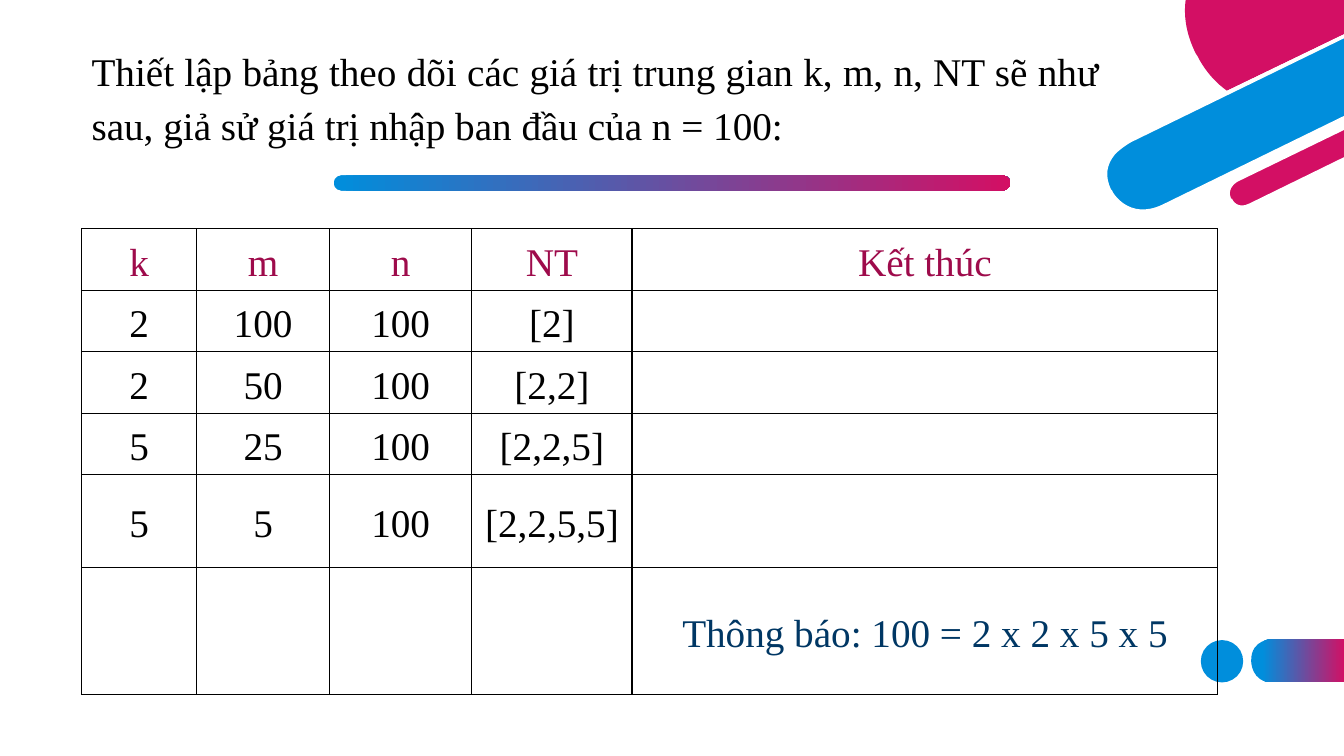
import pptx
import pptx.dml.color
import pptx.enum.shapes
import pptx.enum.text
import pptx.oxml
import pptx.oxml.ns
import pptx.util
from pptx.util import Inches

BLUE, PINK, WHITE, BLACK = "008EDC", "D30F64", "FFFFFF", "000000"
MAROON, NAVY = "9E0B4B", "003764"
FONT = "Times New Roman"

# Outlines in inches from the corner of their box: a pair of numbers is a
# point, six numbers are a cubic curve (two control points and its end).
CORNER_PARTS = [
    (WHITE, [(2.43, 0.81), (2.16, 0.94), (1.84, 1.1, 1.54, 1.08, 1.29, 0.89),
             (1.09, 0.74, 0.99, 0.55, 0.99, 0.55), (0.98, 0.52),
             (0.89, 0.34, 0.85, 0.16, 0.88, 0), (0.84, 0),
             (0.81, 0.17, 0.85, 0.35, 0.94, 0.54), (0.96, 0.57),
             (0.96, 0.58, 1.06, 0.77, 1.26, 0.92),
             (1.38, 1.01, 1.54, 1.09, 1.75, 1.09),
             (1.87, 1.09, 2.01, 1.06, 2.18, 0.98), (2.43, 0.86)]),
    (BLUE, [(0.31, 1.39), (0.31, 1.39, -0.05, 1.57, 0.11, 1.89), (0.11, 1.9),
            (0.11, 1.9, 0.27, 2.22, 0.64, 2.04), (2.43, 1.17), (2.43, 0.36)]),
    (PINK, [(0.98, 0.56), (0.98, 0.56, 1.07, 0.76, 1.27, 0.9), (2.43, 0.34),
            (2.43, 0), (0.86, 0), (0.84, 0.15, 0.86, 0.33, 0.96, 0.53)]),
    (PINK, [(2.43, 1.26), (1.37, 1.78), (1.37, 1.78, 1.23, 1.85, 1.3, 1.97),
            (1.3, 1.98), (1.3, 1.98, 1.36, 2.11, 1.5, 2.04), (2.43, 1.58)]),
    (WHITE, [(1.49, 2.02), (1.37, 2.08, 1.32, 1.98, 1.32, 1.97), (1.31, 1.97),
             (1.26, 1.86, 1.38, 1.8, 1.38, 1.8), (2.43, 1.29), (2.43, 1.24),
             (1.36, 1.76), (1.36, 1.76, 1.29, 1.8, 1.27, 1.87),
             (1.25, 1.91, 1.26, 1.95, 1.28, 1.99),
             (1.3, 2.03, 1.35, 2.08, 1.42, 2.08),
             (1.45, 2.08, 1.48, 2.08, 1.51, 2.06), (2.43, 1.61), (2.43, 1.56)]),
    (WHITE, [(0.63, 2.03), (0.29, 2.19, 0.13, 1.9, 0.13, 1.89), (0.12, 1.88),
             (0.06, 1.75, 0.07, 1.64, 0.16, 1.53),
             (0.23, 1.46, 0.32, 1.41, 0.32, 1.41), (2.43, 0.38), (2.43, 0.34),
             (0.3, 1.37), (0.29, 1.38, 0.12, 1.46, 0.06, 1.63),
             (0.03, 1.71, 0.04, 1.8, 0.09, 1.9), (0.09, 1.91),
             (0.09, 1.91, 0.2, 2.12, 0.43, 2.12),
             (0.49, 2.12, 0.56, 2.1, 0.64, 2.06), (2.43, 1.19), (2.43, 1.15)]),
]
TAB_OUTLINE = [(0.21, 0.43), (0.93, 0.43), (0.93, 0), (0.21, 0),
               (0.21, 0, 0, 0, 0, 0.21), (0, 0.22), (0, 0.22, 0, 0.43, 0.21, 0.43)]

COLUMNS = [1.14, 1.32, 1.41, 1.59, 5.81]
ROWS = [0.61, 0.61, 0.61, 0.61, 0.92, 1.26]
VALUES = [
    ["k", "m", "n", "NT", "Kết thúc"],
    ["2", "100", "100", "[2]", ""],
    ["2", "50", "100", "[2,2]", ""],
    ["5", "25", "100", "[2,2,5]", ""],
    ["5", "5", "100", "[2,2,5,5]", ""],
    ["", "", "", "", "Thông báo: 100 = 2 x 2 x 5 x 5"],
]


def rgb(color):
    return pptx.dml.color.RGBColor.from_string(color)


def paint(s, color):
    s.shadow.inherit = False
    s.line.fill.background()
    s.fill.solid()
    s.fill.fore_color.rgb = rgb(color)


def paint_gradient(s, start=0):
    """Blend blue into pink from left to right, beginning at start (0 to 1)."""
    s.shadow.inherit = False
    s.line.fill.background()
    s.fill.gradient()
    s.fill.gradient_angle = 0
    for stop, color, position in zip(s.fill.gradient_stops, (BLUE, PINK), (start, 1)):
        stop.color.rgb = rgb(color)
        stop.position = position


def add_outline(shapes, left, top, outline):
    """Draw the ends of all segments, then bend those that are curves."""
    ends = [(Inches(left + seg[-2]), Inches(top + seg[-1])) for seg in outline]
    builder = shapes.build_freeform(*ends[0])
    builder.add_line_segments(ends[1:], close=True)
    s = builder.convert_to_shape()
    lines = s._element.findall(".//" + pptx.oxml.ns.qn("a:lnTo"))
    for line, seg in zip(lines, outline[1:]):
        if len(seg) == 6:
            points = "".join(
                f'<a:pt x="{Inches(left + x) - s.left}" y="{Inches(top + y) - s.top}"/>'
                for x, y in zip(seg[::2], seg[1::2]))
            line.getparent().replace(line, pptx.oxml.parse_xml(
                f'<a:cubicBezTo {pptx.oxml.ns.nsdecls("a")}>{points}</a:cubicBezTo>'))
    return s


def style_paragraph(p, align, color):
    p.alignment = align
    p.line_spacing = 1.15
    for r in p.runs:
        r.font.name = FONT
        r.font.size = pptx.util.Pt(28)
        r.font.color.rgb = rgb(color)


def add_corner(slide, left, top):
    group = slide.shapes.add_group_shape()
    for color, outline in CORNER_PARTS:
        paint(add_outline(group.shapes, left, top, outline), color)


def add_page_marker(slide, left, top, size):
    dot = slide.shapes.add_shape(pptx.enum.shapes.MSO_SHAPE.OVAL, Inches(left),
                                 Inches(top), Inches(size), Inches(size))
    paint(dot, BLUE)
    tab = add_outline(slide.shapes, left + size + 0.08, top - 0.01, TAB_OUTLINE)
    paint_gradient(tab, 0.12)


def add_divider(slide, *box):
    bar = slide.shapes.add_shape(pptx.enum.shapes.MSO_SHAPE.ROUNDED_RECTANGLE,
                                 *map(Inches, box))
    bar.adjustments[0] = 0.5
    paint_gradient(bar)


def add_intro(slide, *box):
    tf = slide.shapes.add_textbox(*map(Inches, box)).text_frame
    tf.word_wrap = True
    tf.text = ("Thiết lập bảng theo dõi các giá trị trung gian k, m, n, NT sẽ như "
               "sau, giả sử giá trị nhập ban đầu của n = 100:")
    style_paragraph(tf.paragraphs[0], pptx.enum.text.PP_ALIGN.JUSTIFY, BLACK)


def add_borders(cell):
    tc_pr = cell._tc.get_or_add_tcPr()
    for side in ("lnL", "lnR", "lnT", "lnB"):
        tc_pr.append(pptx.oxml.parse_xml(
            f'<a:{side} {pptx.oxml.ns.nsdecls("a")} w="12700"><a:solidFill>'
            f'<a:srgbClr val="{BLACK}"/></a:solidFill></a:{side}>'))


def add_trace_table(slide, left, top):
    table = slide.shapes.add_table(len(ROWS), len(COLUMNS), Inches(left), Inches(top),
                                   Inches(sum(COLUMNS)), Inches(sum(ROWS))).table
    table.first_row = table.horz_banding = False
    for column, width in zip(table.columns, COLUMNS):
        column.width = Inches(width)
    for i, (row, height) in enumerate(zip(table.rows, ROWS)):
        row.height = Inches(height)
        color = {0: MAROON, len(ROWS) - 1: NAVY}.get(i, BLACK)
        for cell, value in zip(row.cells, VALUES[i]):
            cell.text = value
            cell.vertical_anchor = pptx.enum.text.MSO_ANCHOR.MIDDLE
            cell.margin_left = cell.margin_right = Inches(0.07)
            cell.margin_top = cell.margin_bottom = 0
            style_paragraph(cell.text_frame.paragraphs[0],
                            pptx.enum.text.PP_ALIGN.CENTER, color)
            add_borders(cell)
            cell.fill.background()


def main():
    prs = pptx.Presentation()
    prs.slide_width, prs.slide_height = Inches(13.33), Inches(7.5)
    slide = prs.slides.add_slide(prs.slide_layouts[6])
    add_page_marker(slide, 11.91, 6.35, 0.42)
    add_divider(slide, 3.31, 1.74, 6.71, 0.15)
    add_corner(slide, 10.9, 0)
    add_intro(slide, 0.81, 0.35, 10.19, 1.18)
    add_trace_table(slide, 0.81, 2.27)
    prs.save("out.pptx")


if __name__ == "__main__":
    main()
